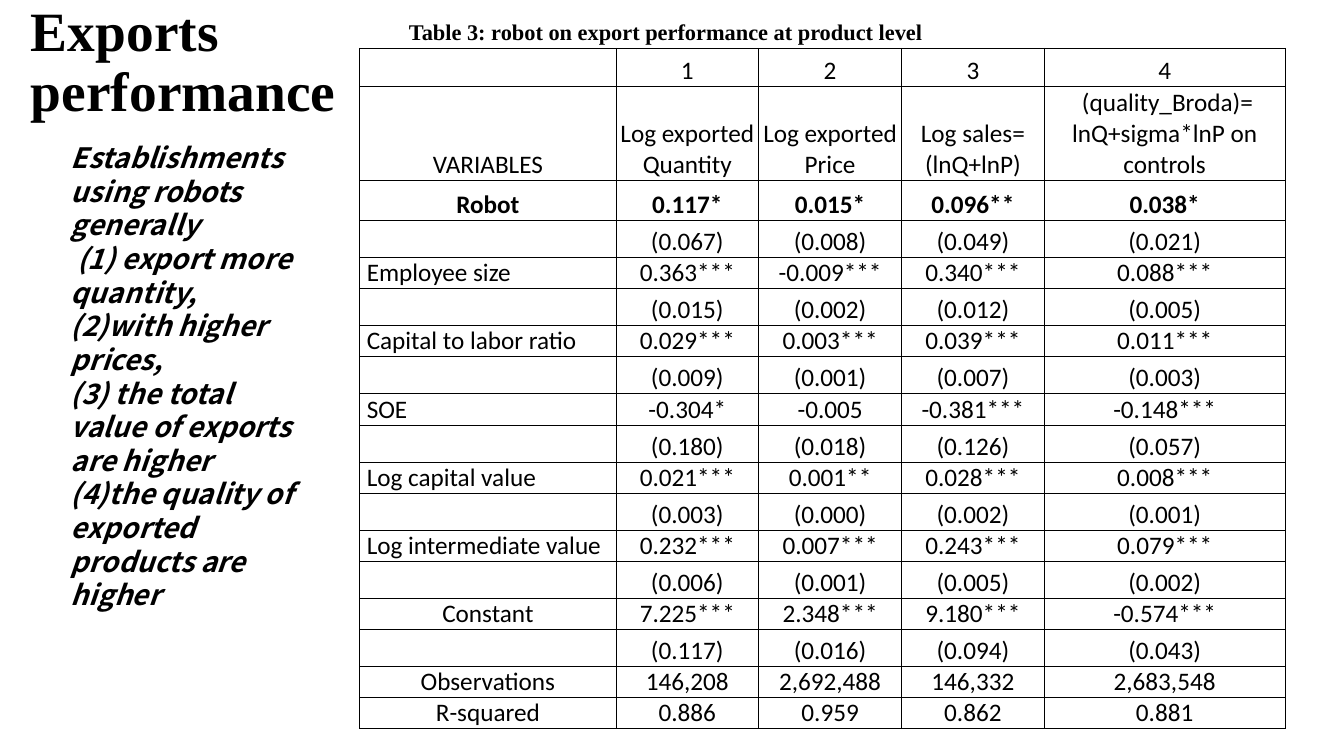
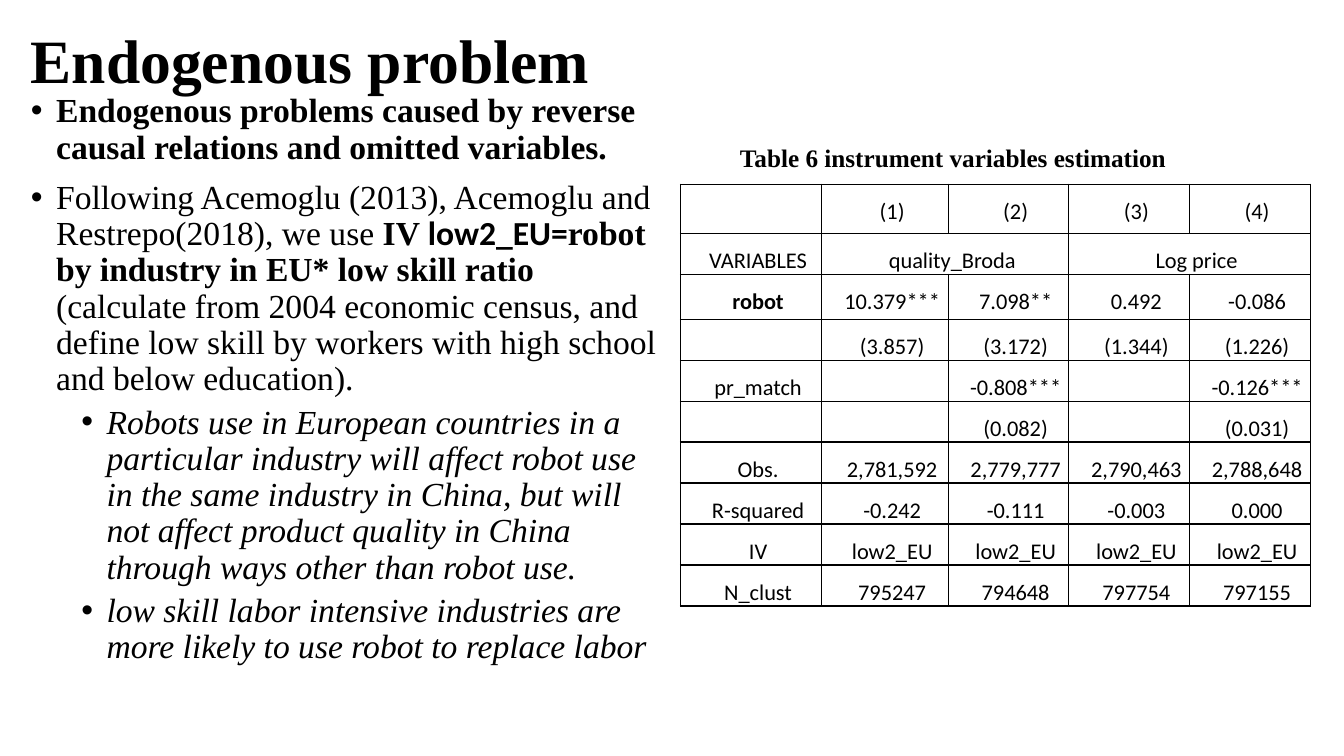
from lxml import etree
from pptx import Presentation
from pptx.dml.color import RGBColor
from pptx.enum.text import MSO_ANCHOR as Anchor, PP_ALIGN as Align
from pptx.oxml.ns import qn
from pptx.util import Pt

BLACK = RGBColor(0x00, 0x00, 0x00)
SERIF, SANS, NOTE = "Times New Roman", "Calibri", "Noto Sans CJK SC"

# Slide 1 content
EXPORT_TITLE = "Exports \vperformance"
EXPORT_CAPTION = "Table 3: robot on export performance at product level"
EXPORT_NOTES = [
    "Establishments using robots generally",
    " (1) export more quantity,",
    "(2)with higher prices,",
    "(3) the total value of exports are higher",
    "(4)the quality of exported products are higher",
]
EXPORT_ROWS = [
    ("", "1", "2", "3", "4"),
    ("VARIABLES", "Log exported Quantity", "Log exported Price",
     "Log sales=\n(lnQ+lnP)", " (quality_Broda)=\nlnQ+sigma*lnP on controls"),
    ("Robot", "0.117*", "0.015*", "0.096**", "0.038*"),
    ("", "(0.067)", "(0.008)", "(0.049)", "(0.021)"),
    ("Employee size", "0.363***", "-0.009***", "0.340***", "0.088***"),
    ("", "(0.015)", "(0.002)", "(0.012)", "(0.005)"),
    ("Capital to labor ratio", "0.029***", "0.003***", "0.039***", "0.011***"),
    ("", "(0.009)", "(0.001)", "(0.007)", "(0.003)"),
    ("SOE", "-0.304*", "-0.005", "-0.381***", "-0.148***"),
    ("", "(0.180)", "(0.018)", "(0.126)", "(0.057)"),
    ("Log capital value", "0.021***", "0.001**", "0.028***", "0.008***"),
    ("", "(0.003)", "(0.000)", "(0.002)", "(0.001)"),
    ("Log intermediate value", "0.232***", "0.007***", "0.243***", "0.079***"),
    ("", "(0.006)", "(0.001)", "(0.005)", "(0.002)"),
    ("Constant", "7.225***", "2.348***", "9.180***", "-0.574***"),
    ("", "(0.117)", "(0.016)", "(0.094)", "(0.043)"),
    ("Observations", "146,208", "2,692,488", "146,332", "2,683,548"),
    ("R-squared", "0.886", "0.959", "0.862", "0.881"),
]
LEFT_LABELS = {"Employee size", "Capital to labor ratio", "SOE",
               "Log capital value", "Log intermediate value"}

# Slide 2 content: (level, [(text, bold, font), ...])
IV_TITLE = "Endogenous problem"
IV_CAPTION = "Table 6 instrument variables estimation"
IV_POINTS = [
    (0, [("Endogenous problems caused by reverse causal relations and omitted "
          "variables.", True, SERIF)]),
    (0, [("Following Acemoglu (2013), Acemoglu and Restrepo(2018), we use ", False, SERIF),
         ("IV ", True, SERIF), ("low2_EU=", True, SANS),
         ("robot by industry in EU* low skill ratio", True, SERIF),
         (" (calculate from 2004 economic census, and define low skill by workers "
          "with high school and below education).", False, SERIF)]),
    (1, [("Robots use in European countries in a particular industry will affect "
          "robot use in the same industry in China, but will not affect product "
          "quality in China through ways other than robot use.", False, SERIF)]),
    (1, [("low skill labor intensive industries are more likely to use robot to "
          "replace labor", False, SERIF)]),
]
IV_ROWS = [
    ("", "(1)", "(2)", "(3)", "(4)"),
    ("VARIABLES", "quality_Broda", "", "Log price", ""),
    ("robot", "10.379***", "7.098**", "0.492", "-0.086"),
    ("", "(3.857)", "(3.172)", "(1.344)", "(1.226)"),
    ("pr_match", "", "-0.808***", "", "-0.126***"),
    ("", "", "(0.082)", "", "(0.031)"),
    ("Obs.", "2,781,592", "2,779,777", "2,790,463", "2,788,648"),
    ("R-squared", "-0.242", "-0.111", "-0.003", "0.000"),
    ("IV", "low2_EU", "low2_EU", "low2_EU", "low2_EU"),
    ("N_clust", "795247", "794648", "797754", "797155"),
]


def style(r, size, font, bold=False, italic=False):
    f = r.font
    f.size, f.name, f.bold, f.italic = Pt(size), font, bold, italic
    f.color.rgb = BLACK


def indent(p, left, first):
    pPr = p._p.get_or_add_pPr()
    pPr.set("marL", str(Pt(left)))
    pPr.set("indent", str(Pt(first)))
    return pPr


def add_box(slide, left, top, width, height, wrap=True):
    tf = slide.shapes.add_textbox(Pt(left), Pt(top), Pt(width), Pt(height)).text_frame
    tf.word_wrap = wrap
    return tf


def add_title(slide, text, size):
    tf = add_box(slide, 15, 8, 828, 75)
    tf.vertical_anchor = Anchor.MIDDLE
    p = tf.paragraphs[0]
    p.text, p.line_spacing = text, 0.9
    for r in p.runs:
        style(r, size, SERIF, bold=True)


def add_caption(slide, text, size, left, top, width, height, wrap=True):
    p = add_box(slide, left, top, width, height, wrap).paragraphs[0]
    p.text, p.alignment, p.line_spacing = text, Align.JUSTIFY, 1.5
    indent(p, 0, 24)
    style(p.runs[0], size, SERIF, bold=True)


def add_borders(cell, width):
    tcPr = cell._tc.get_or_add_tcPr()
    for i, side in enumerate(("a:lnL", "a:lnR", "a:lnT", "a:lnB")):
        ln = etree.Element(qn(side), w=str(Pt(width)))
        fill = etree.SubElement(ln, qn("a:solidFill"))
        etree.SubElement(fill, qn("a:srgbClr"), val=str(BLACK))
        tcPr.insert(i, ln)


def add_grid(slide, rows, left, top, widths, heights, size, line, bold_row,
             margin, first=0, spacing=None, anchor=Anchor.TOP):
    table = slide.shapes.add_table(len(rows), len(widths), Pt(left), Pt(top),
                                   Pt(sum(widths)), Pt(sum(heights))).table
    table.first_row = table.horz_banding = False
    for col, width in zip(table.columns, widths):
        col.width = Pt(width)
    for i, (values, height) in enumerate(zip(rows, heights)):
        table.rows[i].height = Pt(height)
        for j, text in enumerate(values):
            cell = table.cell(i, j)
            is_left = text in LEFT_LABELS
            cell.margin_left = cell.margin_right = Pt(5 if is_left else margin)
            cell.margin_top = cell.margin_bottom = 0
            cell.vertical_anchor = anchor
            cell.fill.background()
            add_borders(cell, line)
            if not text:
                continue
            cell.text_frame.text = text
            for p in cell.text_frame.paragraphs:
                p.alignment = Align.LEFT if is_left else Align.CENTER
                p.line_spacing = spacing
                indent(p, 0, first)
                style(p.runs[0], size, SANS, bold=i == bold_row or text == "robot")
    return table


def build_exports(slide):
    add_title(slide, EXPORT_TITLE, 39.6)
    # Coefficient rows are lower than the rows of standard errors
    heights = [27, 67, 29] + [22.3 if row[0] else 26.4 for row in EXPORT_ROWS[3:]]
    add_grid(slide, EXPORT_ROWS, 257, 34.5, [183, 102, 102, 102, 172], heights,
             size=18, line=0.5, bold_row=2, margin=0.7, anchor=Anchor.BOTTOM)
    add_caption(slide, EXPORT_CAPTION, 16, 261, 0, 480, 33)

    # Findings beside the table
    tf = add_box(slide, 43.5, 97, 176, 346)
    tf.text = "\n".join(EXPORT_NOTES)
    for p in tf.paragraphs:
        style(p.runs[0], 20, NOTE, bold=True, italic=True)


def build_endogeneity(slide):
    add_title(slide, IV_TITLE, 44)
    tf = add_box(slide, 15, 63.5, 464, 415)
    for i, (level, runs) in enumerate(IV_POINTS):
        p = tf.add_paragraph() if i else tf.paragraphs[0]
        p.level, p.line_spacing, p.space_before = level, 0.9, Pt(5 if level else 10)
        pPr = indent(p, 18 + 36 * level, -18)
        etree.SubElement(pPr, qn("a:buFont"), typeface="Arial")
        etree.SubElement(pPr, qn("a:buChar"), char="•")
        for text, bold, font in runs:
            r = p.add_run()
            r.text = text
            style(r, 24, font, bold, italic=level == 1)

    heights = [35.2, 29.3, 32] + [29.3] * 7
    table = add_grid(slide, IV_ROWS, 486, 131.5, [101, 90.5, 86, 86.5, 86], heights,
                     size=16, line=1, bold_row=None, margin=3.6, first=10, spacing=1.5)
    for j in (1, 3):
        table.cell(1, j).merge(table.cell(1, j + 1))
    add_caption(slide, IV_CAPTION, 18, 497.5, 87, 346, 40, wrap=False)


def main():
    prs = Presentation()
    prs.slide_width, prs.slide_height = Pt(960), Pt(540)
    for build in (build_exports, build_endogeneity):
        build(prs.slides.add_slide(prs.slide_layouts[6]))
    prs.save("out.pptx")


if __name__ == "__main__":
    main()
